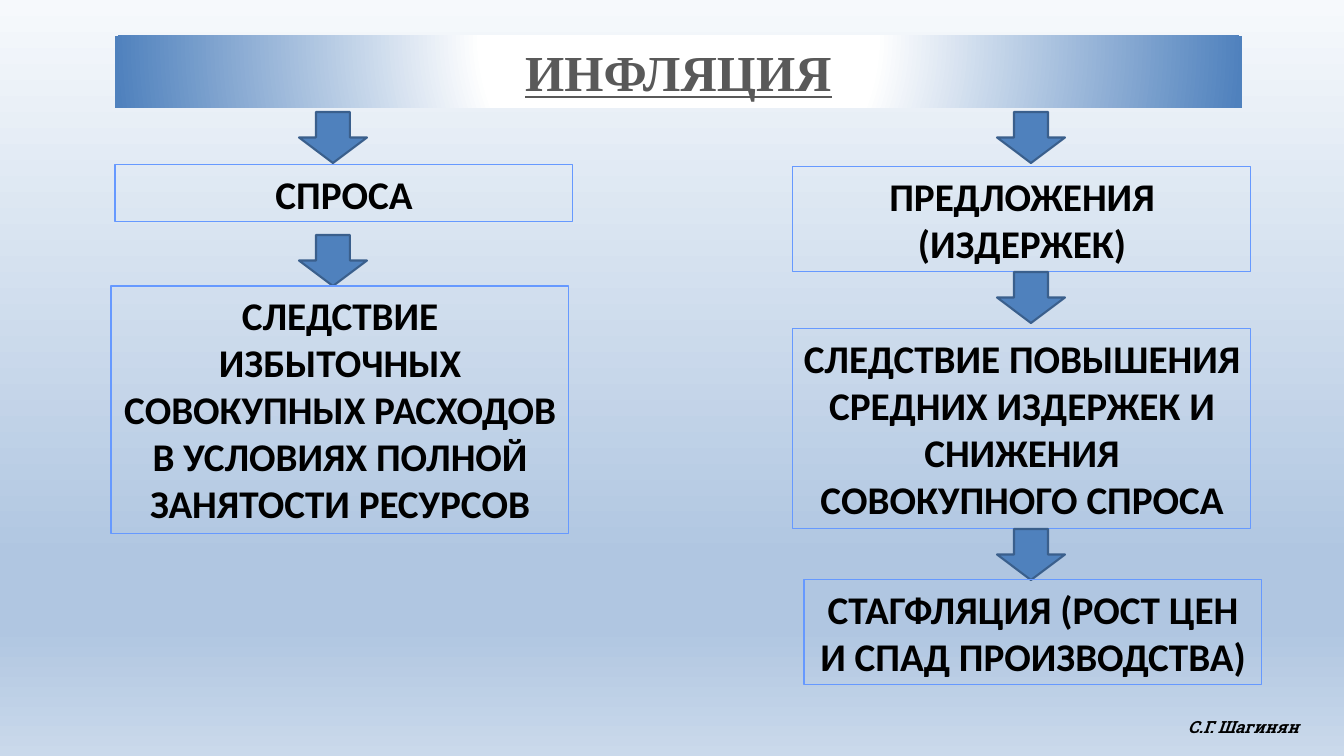
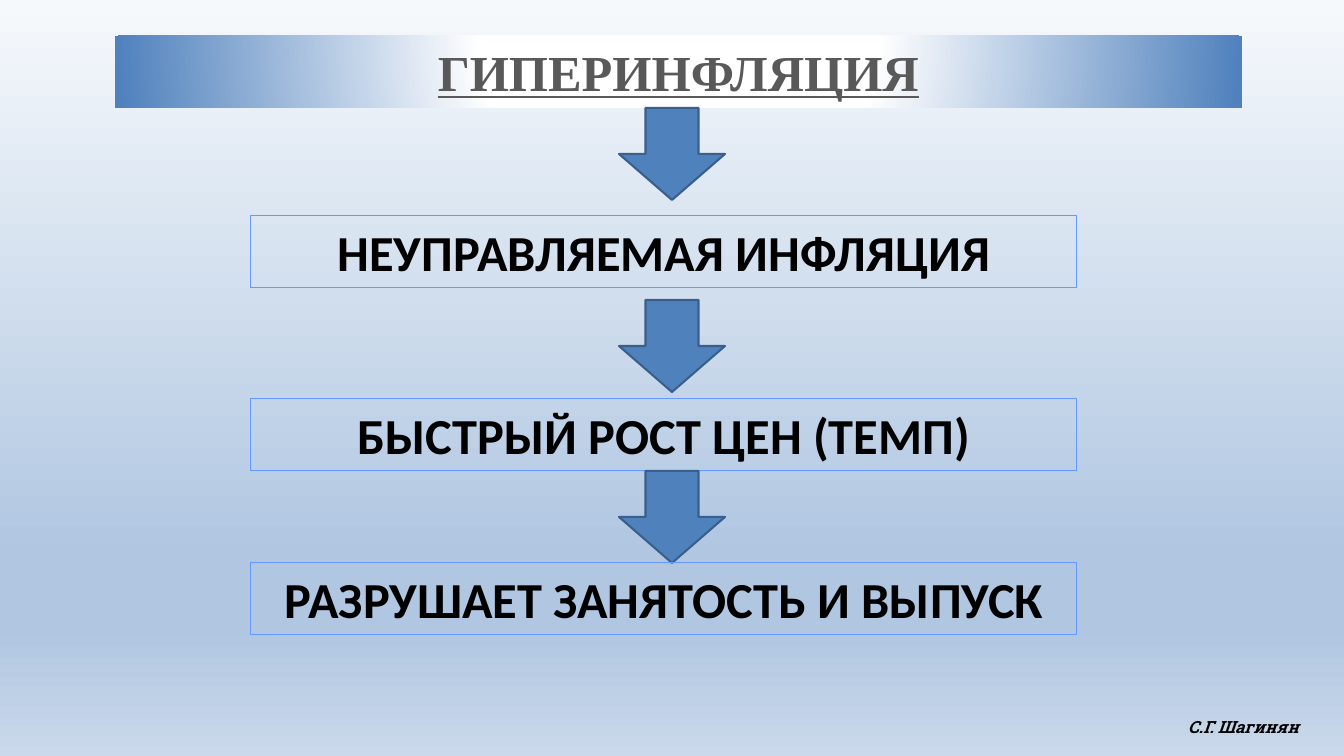
from lxml import etree
from pptx import Presentation
from pptx.dml.color import RGBColor
from pptx.enum.shapes import MSO_SHAPE
from pptx.enum.text import MSO_ANCHOR, MSO_AUTO_SIZE, PP_ALIGN
from pptx.oxml.ns import qn
from pptx.util import Pt

RECTANGLE = MSO_SHAPE.RECTANGLE
DOWN_ARROW = MSO_SHAPE.DOWN_ARROW
CENTER = PP_ALIGN.CENTER
LEFT = PP_ALIGN.LEFT
TOP = MSO_ANCHOR.TOP
GROW = MSO_AUTO_SIZE.SHAPE_TO_FIT_TEXT

SLIDE_SIZE = (1344, 756)
BAND = (115, 36, 1127, 72)
BAND_BOTTOM = BAND[1] + BAND[3]
SIGNATURE = (1178, 712, 145, 30)

BLUE = "4F81BD"
ARROW_EDGE = "3A5F8C"
BOX_EDGE = "6699FF"
TITLE_GRAY = "595959"
BLACK = "000000"
BACKGROUND_STOPS = [(0, "F6F9FC"), (74, "B0C6E1"), (83, "B0C6E1"), (100, "CAD9EB")]
BAND_STOPS = [(0, "FFFFFF"), (35, "FFFFFF"), (100, BLUE)]


def px(length):
    return round(length * 914400 / 100.8)


def color(value):
    return RGBColor.from_string(value)


def set_gradient(fill, parent, stops, direction, **attributes):
    fill.solid()
    solid = parent.find(qn("a:solidFill"))
    gradient = etree.Element(qn("a:gradFill"), rotWithShape="1")
    stop_list = etree.SubElement(gradient, qn("a:gsLst"))
    for position, value in stops:
        stop = etree.SubElement(stop_list, qn("a:gs"), pos=str(position * 1000))
        etree.SubElement(stop, qn("a:srgbClr"), val=value)
    shade = etree.SubElement(gradient, qn(direction), **attributes)
    parent.replace(solid, gradient)
    return shade


def set_background(master):
    fill = master.background.fill
    properties = master.element.find(".//" + qn("p:bgPr"))
    set_gradient(fill, properties, BACKGROUND_STOPS, "a:lin", ang="5400000", scaled="0")


def add_text(shape, text, size, font_name, value, alignment=CENTER, wrap=True,
             italic=False, underline=False):
    frame = shape.text_frame
    frame.word_wrap = wrap
    frame.auto_size = GROW
    frame.vertical_anchor = TOP
    paragraph = frame.paragraphs[0]
    paragraph.alignment = alignment
    run = paragraph.add_run()
    run.text = text
    font = run.font
    font.size = Pt(size)
    font.name = font_name
    font.bold = True
    font.italic = italic
    font.underline = underline
    font.color.rgb = color(value)


def add_shape(slide, kind, box, fill=None, edge=None, edge_width=0.75):
    shape = slide.shapes.add_shape(kind, *map(px, box))
    shape.shadow.inherit = False
    if fill:
        shape.fill.solid()
        shape.fill.fore_color.rgb = color(fill)
    else:
        shape.fill.background()
    if edge:
        shape.line.color.rgb = color(edge)
        shape.line.width = Pt(edge_width)
    else:
        shape.line.fill.background()
    return shape


def add_title_band(slide, title):
    band = add_shape(slide, RECTANGLE, BAND)
    shade = set_gradient(band.fill, band.element.spPr, BAND_STOPS, "a:path", path="circle")
    etree.SubElement(shade, qn("a:fillToRect"), l="50000", t="-80000", r="50000", b="180000")
    add_text(band, title, 36, "Times New Roman", TITLE_GRAY, underline=True)


def add_signature(slide):
    signature = slide.shapes.add_textbox(*map(px, SIGNATURE))
    add_text(signature, "С.Г. Шагинян", 12, "Roboto Slab", BLACK, LEFT, wrap=False, italic=True)


def add_chain(slide, left, width, size, arrow, steps):
    arrow_offset, arrow_width, arrow_height = arrow
    top = BAND_BOTTOM
    for gap_above, gap_below, shift, height, text in steps:
        top += gap_above
        arrow_box = (left + arrow_offset, top, arrow_width, arrow_height)
        add_shape(slide, DOWN_ARROW, arrow_box, BLUE, ARROW_EDGE, 1.5)
        top += arrow_height + gap_below
        box = add_shape(slide, RECTANGLE, (left + shift, top, width, height), edge=BOX_EDGE)
        add_text(box, text, size, "Calibri", BLACK)
        top += height


def add_chain_slide(presentation, title, chains):
    slide = presentation.slides.add_slide(presentation.slide_layouts[6])
    add_title_band(slide, title)
    for chain in chains:
        add_chain(slide, *chain)
    add_signature(slide)


DEMAND_STEPS = [
    (4, 2, 0, 57, "СПРОСА"),
    (13, 0, -4, 248, "СЛЕДСТВИЕ ИЗБЫТОЧНЫХ СОВОКУПНЫХ РАСХОДОВ В УСЛОВИЯХ ПОЛНОЙ ЗАНЯТОСТИ РЕСУРСОВ"),
]
SUPPLY_STEPS = [
    (4, 4, 0, 105, "ПРЕДЛОЖЕНИЯ (ИЗДЕРЖЕК)"),
    (0, 6, 0, 200, "СЛЕДСТВИЕ ПОВЫШЕНИЯ СРЕДНИХ ИЗДЕРЖЕК И СНИЖЕНИЯ СОВОКУПНОГО СПРОСА"),
    (0, 0, 11, 105, "СТАГФЛЯЦИЯ (РОСТ ЦЕН И СПАД ПРОИЗВОДСТВА)"),
]
HYPERINFLATION_STEPS = [
    (0, 16, 0, 72, "НЕУПРАВЛЯЕМАЯ ИНФЛЯЦИЯ"),
    (12, 7, 0, 72, "БЫСТРЫЙ РОСТ ЦЕН (ТЕМП)"),
    (0, 0, 0, 72, "РАЗРУШАЕТ ЗАНЯТОСТЬ И ВЫПУСК"),
]


def main():
    presentation = Presentation()
    presentation.slide_width, presentation.slide_height = map(px, SLIDE_SIZE)
    set_background(presentation.slide_master)
    add_chain_slide(presentation, "ИНФЛЯЦИЯ", [
        (115, 458, 28, (184, 68, 51), DEMAND_STEPS),
        (793, 458, 28, (204, 68, 51), SUPPLY_STEPS),
    ])
    add_chain_slide(presentation, "ГИПЕРИНФЛЯЦИЯ", [
        (251, 826, 36, (368, 106, 92), HYPERINFLATION_STEPS),
    ])
    presentation.save("out.pptx")


if __name__ == "__main__":
    main()
